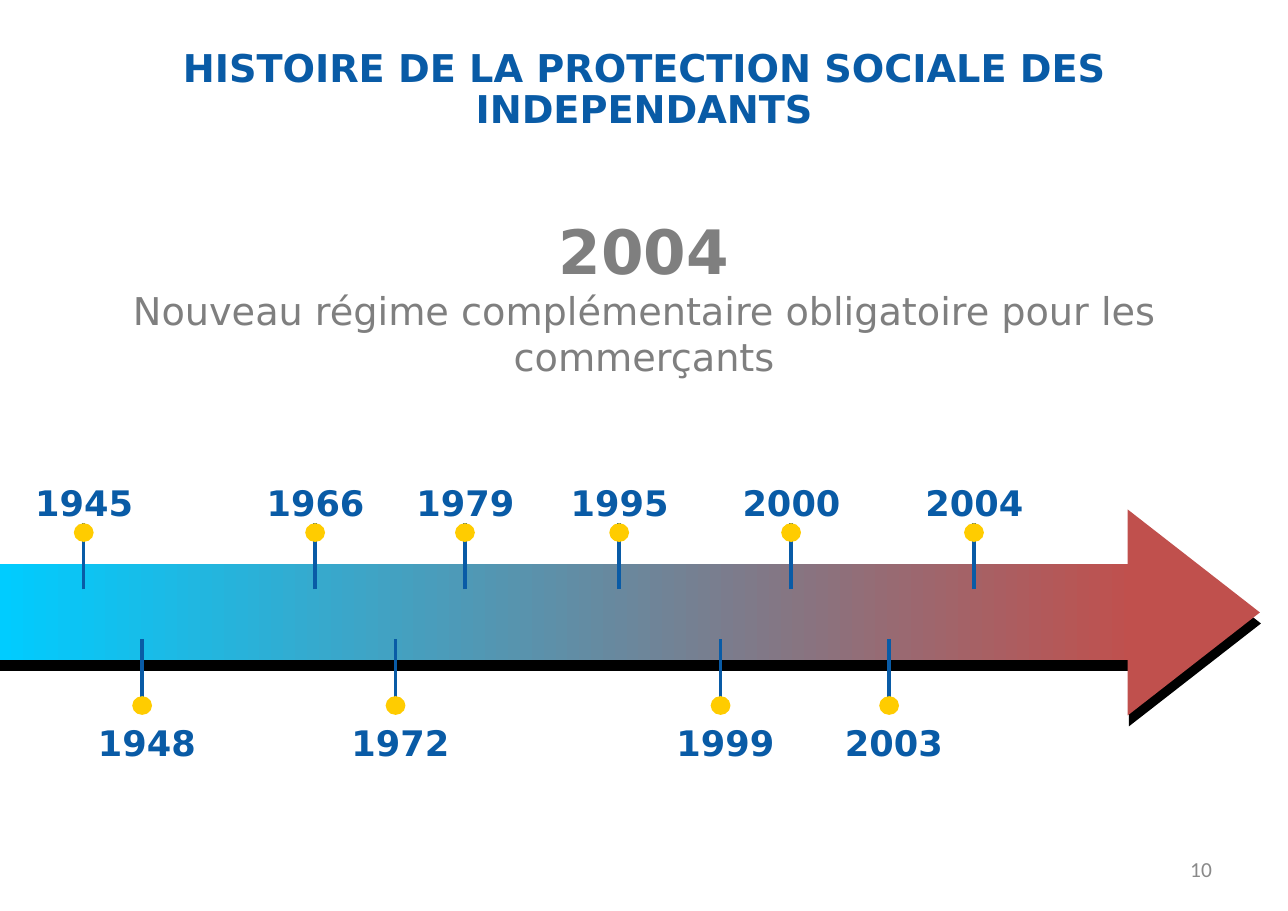
from pptx import Presentation
from pptx.dml.color import RGBColor
from pptx.enum.shapes import MSO_CONNECTOR as Connector, MSO_SHAPE as Shape
from pptx.enum.text import MSO_ANCHOR as Anchor, MSO_AUTO_SIZE as AutoSize, PP_ALIGN as Align
from pptx.oxml.ns import qn
from pptx.util import Inches, Pt

BLUE, GREY, YELLOW, RED, CYAN, BLACK = "095BA6", "7F7F7F", "FFCC00", "C0504D", "00CCFF", "000000"
FONT = "DejaVu Sans"
COLUMNS, ROWS = 116.9, 82.7
YEARS_ABOVE = {"1945": 7.6, "1966": 28.6, "1979": 42.2, "1995": 56.2, "2000": 71.8, "2004": 88.4}
YEARS_BELOW = {"1948": 12.9, "1972": 35.9, "1999": 65.4, "2003": 80.7}


def color(value):
    return RGBColor.from_string(value)


def cells(*counts):
    """Convert counts of grid cells, each a tenth of an inch, to lengths."""
    return [Inches(count / 10) for count in counts]


class TimelineSlide:
    def __init__(self, presentation):
        presentation.slide_width, presentation.slide_height = cells(COLUMNS, ROWS)
        self.slide = presentation.slides.add_slide(presentation.slide_layouts[0])
        self.shapes = self.slide.shapes

    def fill_text(self, holder, lines, align=Align.LEFT, anchor=Anchor.TOP, wrap=True, spacing=1.0):
        """Fill a holder with lines of (text, size, colour, bold, font)."""
        frame = holder.text_frame
        frame.auto_size, frame.word_wrap, frame.vertical_anchor = AutoSize.NONE, wrap, anchor
        frame.margin_left, frame.margin_right, frame.margin_top, frame.margin_bottom = cells(1.1, 1.1, 0.6, 0.6)
        frame.text = "\n".join(line[0] for line in lines)
        for paragraph, (_, size, ink, bold, font) in zip(frame.paragraphs, lines):
            paragraph.alignment, paragraph.line_spacing = align, spacing
            paragraph.space_before = Pt(0)
            paragraph.font.name, paragraph.font.size, paragraph.font.bold = font, Pt(size), bold
            paragraph.font.color.rgb = color(ink)

    def placeholder(self, index, box, lines, spacing):
        holder = self.slide.placeholders[index]
        holder.left, holder.top, holder.width, holder.height = cells(*box)
        self.fill_text(holder, lines, Align.CENTER, spacing=spacing)

    def text(self, shapes, box, line, **layout):
        self.fill_text(shapes.add_textbox(*cells(*box)), [line], **layout)

    def shape(self, shapes, kind, box, fill):
        drawn = shapes.add_shape(kind, *cells(*box))
        drawn.shadow.inherit = False
        drawn.line.fill.background()
        drawn.fill.solid()
        drawn.fill.fore_color.rgb = color(fill)
        return drawn

    def arrow(self, left, top, fill):
        """Draw a shaft and a head, and return the shaft."""
        group = self.shapes.add_group_shape().shapes
        head = self.shape(group, Shape.ISOSCELES_TRIANGLE, (left + 99.1, top - 1.6, 18.7, 12), fill)
        head.rotation = 90
        return self.shape(group, Shape.RECTANGLE, (left, top, 103.2, 8.7), fill)

    def milestone(self, year, column, stem_top, dot_top, label_top, label_shift):
        group = self.shapes.add_group_shape().shapes
        stem = group.add_connector(Connector.STRAIGHT, *cells(column, stem_top + 6, column, stem_top))
        stem.line.color.rgb, stem.line.width = color(BLUE), Pt(2.25)
        properties = stem.element.spPr
        properties.append(properties.makeelement(qn("a:effectLst"), {}))
        self.shape(group, Shape.OVAL, (column - 0.9, dot_top, 1.8, 1.7), YELLOW)
        self.text(group, (column - label_shift, label_top, 11.4, 5), (year, 23, BLUE, True, FONT), wrap=False)


def main():
    presentation = Presentation()
    timeline = TimelineSlide(presentation)

    title = "HISTOIRE DE LA PROTECTION SOCIALE DES INDEPENDANTS"
    timeline.placeholder(0, (0, 3.9, COLUMNS, 8.6), [(title, 25, BLUE, True, FONT)], 0.9)
    reform = "Nouveau régime complémentaire obligatoire pour les commerçants"
    timeline.placeholder(1, (0, 18.8, COLUMNS, 17.8),
                         [("2004", 40, GREY, True, FONT), (reform, 25, GREY, False, FONT)], 1.0)

    timeline.arrow(0, 52.2, BLACK)
    shaft = timeline.arrow(-0.1, 51.2, RED)
    shaft.fill.gradient()
    shaft.fill.gradient_angle = 0
    for stop, ink in zip(shaft.fill.gradient_stops, (CYAN, RED)):
        stop.color.rgb = color(ink)

    for year, column in YEARS_ABOVE.items():
        timeline.milestone(year, column, 47.5, 47.5, 43.1, 5.5)
    for year, column in YEARS_BELOW.items():
        timeline.milestone(year, column, 58, 63.2, 64.9, 5.1)

    timeline.text(timeline.shapes, (83.8, 76.7, 27.3, 4.4), ("10", 14, "898989", False, "Calibri"),
                  align=Align.RIGHT, anchor=Anchor.MIDDLE)
    presentation.save("out.pptx")


if __name__ == "__main__":
    main()
